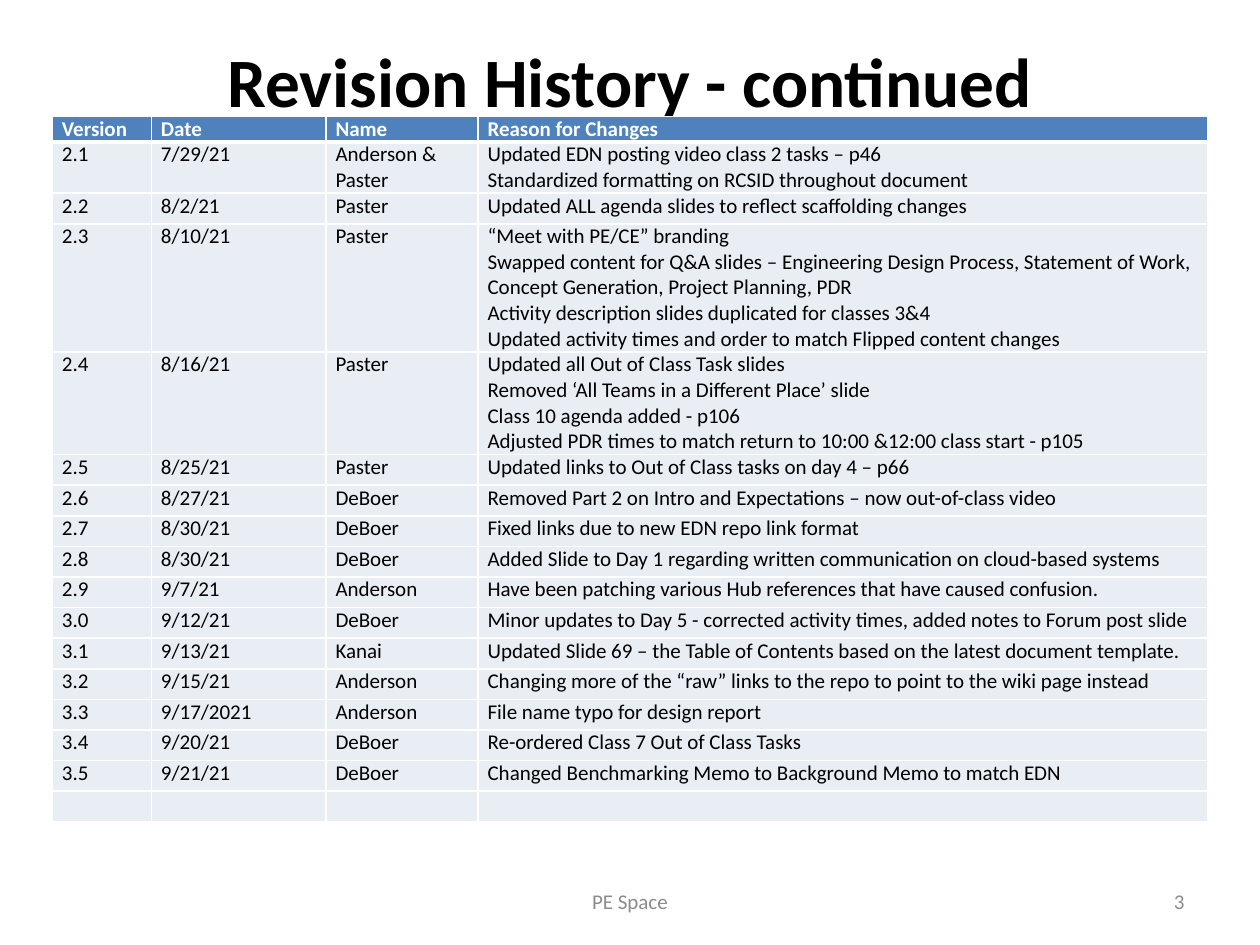
from dataclasses import dataclass

from lxml.etree import SubElement
from pptx import Presentation
from pptx.dml.color import RGBColor
from pptx.enum.text import MSO_ANCHOR, PP_ALIGN
from pptx.oxml.ns import qn
from pptx.slide import Slide
from pptx.table import _Cell
from pptx.text.text import _Paragraph
from pptx.util import Pt

FONT = "Calibri"
BLACK = RGBColor(0x00, 0x00, 0x00)
WHITE = RGBColor(0xFF, 0xFF, 0xFF)
FOOTER_GRAY = RGBColor(0x8C, 0x8C, 0x8C)
HEADER_BLUE = RGBColor(0x4F, 0x81, 0xBD)
BODY_BLUE = RGBColor(0xE9, 0xED, 0xF4)

TABLE_LEFT, TABLE_TOP = 30, 66.5
COLUMN_WIDTHS = (56.6, 99.8, 86.9, 416.7)
HEADINGS = ("Version", "Date", "Name", "Reason for Changes")
TABLE_TEXT_SIZE = 12
LINE_HEIGHT = 14.65
MINIMUM_ROW_HEIGHT = 17.5
CELL_MARGIN = 5.4


@dataclass(frozen=True)
class Revision:
    version: str
    date: str
    name: str
    reasons: tuple[str, ...]
    line_count: int = 1

    @property
    def height(self) -> float:
        return max(MINIMUM_ROW_HEIGHT, self.line_count * LINE_HEIGHT)


@dataclass(frozen=True)
class TextBox:
    text: str
    left: float
    top: float
    width: float
    height: float
    size: float
    color: RGBColor
    alignment: PP_ALIGN
    bold: bool = False
    top_margin: float = 3.6
    bottom_margin: float = 3.6


REVISIONS = (
    Revision("2.1", "7/29/21", "Anderson & Paster", (
        "Updated EDN posting video class 2 tasks – p46",
        "Standardized formatting on RCSID throughout document"), 2),
    Revision("2.2", "8/2/21", "Paster", ("Updated ALL agenda slides to reflect scaffolding changes",)),
    Revision("2.3", "8/10/21", "Paster", (
        "“Meet with PE/CE” branding",
        "Swapped content for Q&A slides – Engineering Design Process, Statement of Work, "
        "Concept Generation, Project Planning, PDR",
        "Activity description slides duplicated for classes 3&4",
        "Updated activity times and order to match Flipped content changes"), 5),
    Revision("2.4", "8/16/21", "Paster", (
        "Updated all Out of Class Task slides",
        "Removed ‘All Teams in a Different Place’ slide",
        "Class 10 agenda added - p106",
        "Adjusted PDR times to match return to 10:00 &12:00 class start - p105"), 4),
    Revision("2.5", "8/25/21", "Paster", ("Updated links to Out of Class tasks on day 4 – p66",)),
    Revision("2.6", "8/27/21", "DeBoer", ("Removed Part 2 on Intro and Expectations – now out-of-class video",)),
    Revision("2.7", "8/30/21", "DeBoer", ("Fixed links due to new EDN repo link format",)),
    Revision("2.8", "8/30/21", "DeBoer", (
        "Added Slide to Day 1 regarding written communication on cloud-based systems",)),
    Revision("2.9", "9/7/21", "Anderson", (
        "Have been patching various Hub references that have caused confusion.",)),
    Revision("3.0", "9/12/21", "DeBoer", (
        "Minor updates to Day 5 - corrected activity times, added notes to Forum post slide",)),
    Revision("3.1", "9/13/21", "Kanai", (
        "Updated Slide 69 – the Table of Contents based on the latest document template.",)),
    Revision("3.2", "9/15/21", "Anderson", (
        "Changing more of the “raw” links to the repo to point to the wiki page instead",)),
    Revision("3.3", "9/17/2021", "Anderson", ("File name typo for design report",)),
    Revision("3.4", "9/20/21", "DeBoer", ("Re-ordered Class 7 Out of Class Tasks",)),
    Revision("3.5", "9/21/21", "DeBoer", ("Changed Benchmarking Memo to Background Memo to match EDN",)),
    Revision("", "", "", ("",)),
)

TITLE = TextBox("Revision History - continued", 36, 21.6, 648, 90, 39.6, BLACK,
                PP_ALIGN.CENTER, bold=True, top_margin=0, bottom_margin=41.6)
FOOTERS = (
    TextBox("PE Space", 246, 500.5, 228, 28.8, 12, FOOTER_GRAY, PP_ALIGN.CENTER),
    TextBox("3", 516, 500.5, 168, 28.8, 12, FOOTER_GRAY, PP_ALIGN.RIGHT),
)


def add_run(paragraph: _Paragraph, text: str, size: float, color: RGBColor, bold: bool) -> None:
    run = paragraph.add_run()
    run.text = text
    run.font.name = FONT
    run.font.size = Pt(size)
    run.font.bold = bold
    run.font.color.rgb = color


def add_text_box(slide: Slide, box: TextBox) -> None:
    shape = slide.shapes.add_textbox(Pt(box.left), Pt(box.top), Pt(box.width), Pt(box.height))
    frame = shape.text_frame
    frame.word_wrap = True
    frame.vertical_anchor = MSO_ANCHOR.MIDDLE
    frame.margin_top = Pt(box.top_margin)
    frame.margin_bottom = Pt(box.bottom_margin)
    paragraph = frame.paragraphs[0]
    paragraph.alignment = box.alignment
    add_run(paragraph, box.text, box.size, box.color, box.bold)


def add_border(cell: _Cell, side: str, width: float) -> None:
    properties = cell._tc.get_or_add_tcPr()
    line = SubElement(properties, qn(f"a:ln{side}"), w=str(Pt(width)))
    fill = SubElement(line, qn("a:solidFill"))
    SubElement(fill, qn("a:srgbClr"), val=str(WHITE))


def fill_cell(cell: _Cell, lines: tuple[str, ...], is_header: bool, below_header: bool) -> None:
    for side in "LRTB":
        thick = (is_header and side == "B") or (below_header and side == "T")
        add_border(cell, side, 3 if thick else 1)
    cell.fill.solid()
    cell.fill.fore_color.rgb = HEADER_BLUE if is_header else BODY_BLUE
    cell.margin_left = cell.margin_right = Pt(CELL_MARGIN)
    cell.margin_top = cell.margin_bottom = Pt(0)
    frame = cell.text_frame
    for index, line in enumerate(lines):
        paragraph = frame.add_paragraph() if index else frame.paragraphs[0]
        if line:
            add_run(paragraph, line, TABLE_TEXT_SIZE, WHITE if is_header else BLACK, is_header)
        else:
            SubElement(paragraph._p, qn("a:endParaRPr"), sz=str(TABLE_TEXT_SIZE * 100))


def add_revision_table(slide: Slide) -> None:
    heights = [LINE_HEIGHT] + [revision.height for revision in REVISIONS]
    table = slide.shapes.add_table(
        len(heights), len(COLUMN_WIDTHS), Pt(TABLE_LEFT), Pt(TABLE_TOP),
        Pt(sum(COLUMN_WIDTHS)), Pt(sum(heights))).table
    table.horz_banding = False
    for column, width in zip(table.columns, COLUMN_WIDTHS):
        column.width = Pt(width)
    for row, height in zip(table.rows, heights):
        row.height = Pt(height)
    rows = [[(heading,) for heading in HEADINGS]]
    rows += [[(item.version,), (item.date,), (item.name,), item.reasons] for item in REVISIONS]
    for row_index, contents in enumerate(rows):
        for column_index, lines in enumerate(contents):
            fill_cell(table.cell(row_index, column_index), lines, row_index == 0, row_index == 1)


def main() -> None:
    presentation = Presentation()
    presentation.slide_width, presentation.slide_height = Pt(720), Pt(540)
    slide = presentation.slides.add_slide(presentation.slide_layouts[6])
    add_text_box(slide, TITLE)
    add_revision_table(slide)
    for footer in FOOTERS:
        add_text_box(slide, footer)
    presentation.save("out.pptx")


if __name__ == "__main__":
    main()
